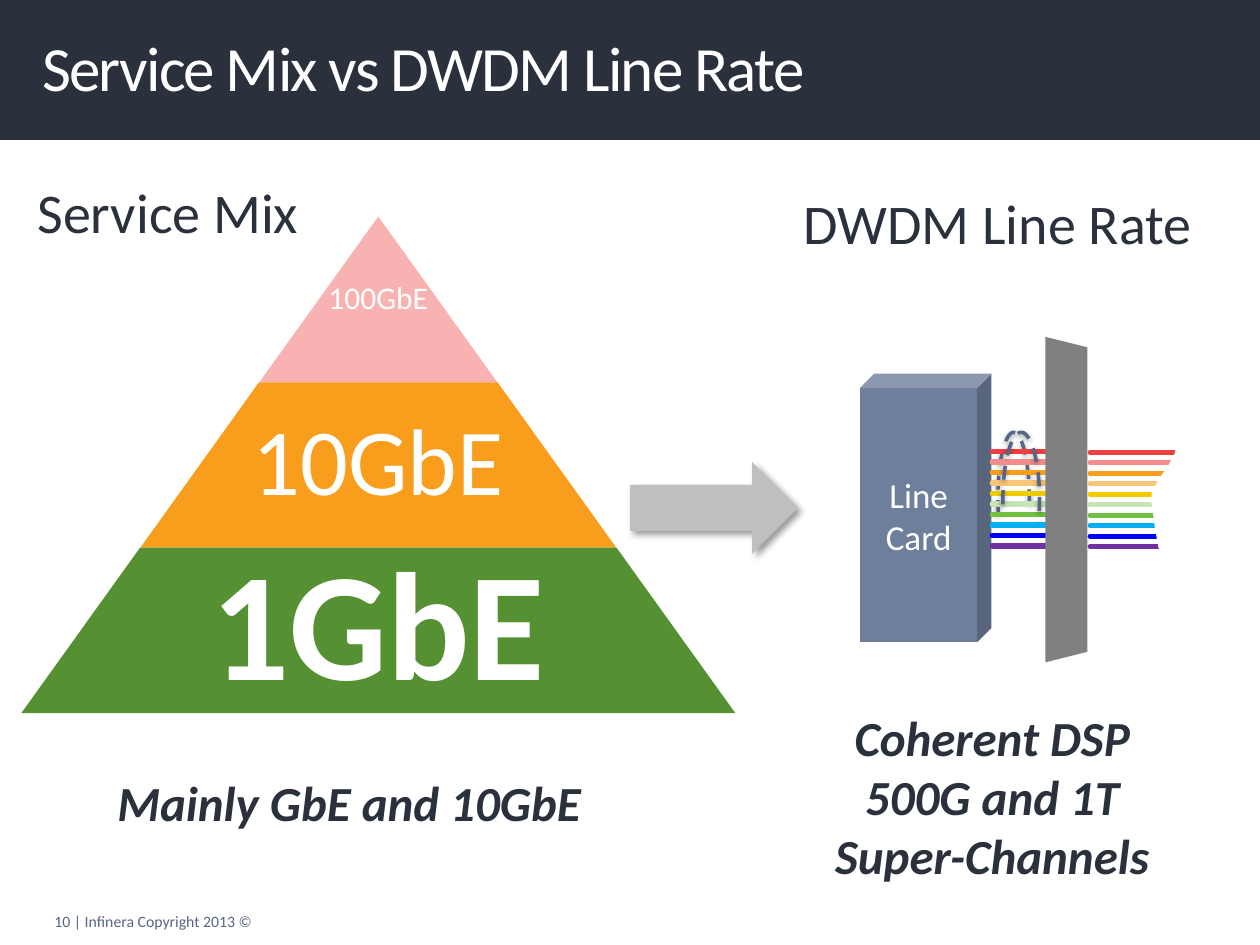
"""Build the slide comparing the Ethernet service mix with the DWDM line rate."""
from typing import NamedTuple, Optional

from lxml.etree import SubElement
from pptx import Presentation
from pptx.dml.color import RGBColor
from pptx.enum.dml import MSO_LINE
from pptx.enum.shapes import MSO_CONNECTOR, MSO_SHAPE as Preset
from pptx.enum.text import MSO_ANCHOR as Anchor, MSO_AUTO_SIZE, PP_ALIGN as Align
from pptx.oxml.ns import qn
from pptx.util import Pt

COLOURS = {
    "navy": "2A313D", "white": "FFFFFF", "slate": "556686", "card": "6E7F9B",
    "pink": "F9B2B2", "orange": "F89E1C", "green": "559132",
    "filter": "808080", "arrow": "BFBFBF", "black": "000000",
}
CHANNELS = ["EF3F3F", "F58C8C", "F89E1C", "FBC577", "F0CC01",
            "C7E5B4", "72BF44", "00B0F0", "0000FF", "7030A0"]
FONT = "Calibri"
CHANNEL_GAP = 6
TIER_HEIGHT, TIER_STEP = 94.5, 136
PYRAMID_CENTRE, PYRAMID_TOP = 216.2, 124
FADED_EDGE = [(678, 222), (677, 237), (671, 260), (667, 267), (662, 274),
              (658, 282), (658, 287), (659.5, 302), (662, 313), (668, 323),
              (671, 334), (680, 338), (688, 348), (693, 337), (696, 300),
              (694, 273), (690, 255), (683, 236), (680, 220)]


class Box(NamedTuple):
    left: float
    top: float
    width: float
    height: float


class Style(NamedTuple):
    size: float
    colour: str = "navy"
    bold: bool = False
    italic: bool = False
    align: Align = Align.CENTER
    spacing: Optional[float] = None


class Shadow(NamedTuple):
    alpha: int
    blur: float
    distance: float
    angle: int


class Tier(NamedTuple):
    label: str
    colour: str
    size: float
    bold: bool


class Loop(NamedTuple):
    box: Box
    end_angle: float
    mirrored: bool


TIERS = [Tier("100GbE", "pink", 18, False),
         Tier("10GbE", "orange", 54, False),
         Tier("1GbE", "green", 88, True)]
BACK_LOOP = Loop(Box(570.2, 247, 18, 75.6), 57.41, True)
FRONT_LOOP = Loop(Box(573.1, 247, 20.9, 75.6), 53.61, False)
LOOP_SHADOW = Shadow(38, 3.1, 1.6, 90)
ARROW_SHADOW = Shadow(40, 4, 3, 45)


def rgb(name: str) -> RGBColor:
    """Return a named colour, or a hex string, as an RGB colour."""
    return RGBColor.from_string(COLOURS.get(name, name))


def write(frame, lines: list[str], style: Style) -> None:
    """Fill a text frame with equally styled paragraphs."""
    frame.text = "\n".join(lines)
    for paragraph in frame.paragraphs:
        paragraph.alignment = style.align
        if style.spacing:
            paragraph.line_spacing = style.spacing
        font = paragraph.font
        font.name, font.size = FONT, Pt(style.size)
        font.bold, font.italic = style.bold, style.italic
        font.color.rgb = rgb(style.colour)


def add_label(slide, box: Box, lines: list[str], style: Style,
              wrap: bool = True, anchor: Anchor = Anchor.TOP) -> None:
    """Add a text box."""
    frame = slide.shapes.add_textbox(*map(Pt, box)).text_frame
    frame.word_wrap = wrap
    frame.vertical_anchor = anchor
    write(frame, lines, style)


def add_filled(slide, preset: Preset, box: Box, colour: str,
               adjustment: Optional[float] = None):
    """Add a flat preset shape without an outline."""
    shape = slide.shapes.add_shape(preset, *map(Pt, box))
    shape.shadow.inherit = False
    shape.fill.solid()
    shape.fill.fore_color.rgb = rgb(colour)
    shape.line.fill.background()
    if adjustment is not None:
        shape.adjustments[0] = adjustment
    return shape


def cast_shadow(shape, shadow: Shadow) -> None:
    """Give a shape an outer shadow."""
    shape.shadow.inherit = False
    effects = shape._element.spPr.find(qn("a:effectLst"))
    outer = SubElement(effects, qn("a:outerShdw"), blurRad=str(Pt(shadow.blur)),
                       dist=str(Pt(shadow.distance)), dir=str(shadow.angle * 60000),
                       rotWithShape="0")
    tint = SubElement(outer, qn("a:srgbClr"), val=COLOURS["black"])
    SubElement(tint, qn("a:alpha"), val=str(shadow.alpha * 1000))


def add_loop(slide, loop: Loop) -> None:
    """Add a dashed arc around the channels."""
    arc = slide.shapes.add_shape(Preset.ARC, *map(Pt, loop.box))
    arc.adjustments[0] = 162 * 0.6
    arc.adjustments[1] = loop.end_angle * 0.6
    arc.fill.background()
    arc.line.color.rgb = rgb("slate")
    arc.line.width = Pt(2)
    arc.line.dash_style = MSO_LINE.DASH
    if loop.mirrored:
        arc._element.spPr.find(qn("a:xfrm")).set("flipH", "1")
    cast_shadow(arc, LOOP_SHADOW)


def add_channels(slide, left: float, right: float, top: float) -> None:
    """Add the evenly spaced, round-capped wavelength lines."""
    for index, colour in enumerate(CHANNELS):
        y = Pt(top + index * CHANNEL_GAP)
        channel = slide.shapes.add_connector(
            MSO_CONNECTOR.STRAIGHT, Pt(left), y, Pt(right), y)
        channel.line.color.rgb = rgb(colour)
        channel.line.width = Pt(3)
        channel.line._ln.set("cap", "rnd")
        SubElement(channel._element.spPr, qn("a:effectLst"))


def add_header(slide) -> None:
    """Add the title on its dark band."""
    band = add_filled(slide, Preset.RECTANGLE, Box(0, 0, 720, 80), "navy")
    slide.shapes._spTree.insert(2, band._element)
    title = slide.shapes.title
    title.left, title.top, title.width, title.height = map(Pt, Box(24, 5, 672, 73.5))
    frame = title.text_frame
    frame.auto_size = MSO_AUTO_SIZE.NONE
    frame.vertical_anchor = Anchor.MIDDLE
    frame.margin_left = 0
    write(frame, ["Service Mix vs DWDM Line Rate"],
          Style(36, "white", align=Align.LEFT, spacing=Pt(36)))
    frame.paragraphs[0].runs[0].font._element.set("spc", "-100")


def add_pyramid(slide) -> None:
    """Add the three service tiers, widening downwards."""
    for level, tier in enumerate(TIERS):
        width = TIER_STEP * (level + 1)
        box = Box(PYRAMID_CENTRE - width / 2, PYRAMID_TOP + level * TIER_HEIGHT,
                  width, TIER_HEIGHT)
        add_filled(slide, Preset.TRAPEZOID, box, tier.colour, 0.718)
        add_label(slide, box, [tier.label],
                  Style(tier.size, "white", tier.bold, spacing=0.9),
                  wrap=False, anchor=Anchor.MIDDLE)


def add_line_side(slide) -> None:
    """Add the line card, its channels and the filter they pass through."""
    add_loop(slide, BACK_LOOP)
    card = add_filled(slide, Preset.CUBE, Box(491.5, 213.6, 75, 153.4), "card", 0.107)
    card.text_frame.vertical_anchor = Anchor.MIDDLE
    write(card.text_frame, ["Line", "Card"], Style(20, "white"))
    add_channels(slide, 567, 603, 258)
    mux = add_filled(slide, Preset.TRAPEZOID, Box(516.3, 273.5, 186, 24), "filter", 0.25)
    mux.rotation = 90
    add_channels(slide, 623, 685, 258.4)
    builder = slide.shapes.build_freeform(*FADED_EDGE[0], scale=Pt(1))
    builder.add_line_segments(FADED_EDGE[1:], close=True)
    edge = builder.convert_to_shape()
    edge.shadow.inherit = False
    edge.fill.solid()
    edge.fill.fore_color.rgb = rgb("white")
    edge.line.fill.background()
    add_loop(slide, FRONT_LOOP)


def main() -> None:
    """Build and save the slide."""
    deck = Presentation()
    deck.slide_width, deck.slide_height = Pt(720), Pt(540)
    slide = deck.slides.add_slide(deck.slide_layouts[5])
    heading = Style(32)
    summary = Style(28, bold=True, italic=True)
    add_header(slide)
    add_label(slide, Box(3.5, 517.5, 168, 18), ["10 | Infinera Copyright 2013 ©"],
              Style(9, "slate"))
    add_pyramid(slide)
    add_line_side(slide)
    add_label(slide, Box(0, 98, 192, 46), ["Service Mix"], heading)
    add_label(slide, Box(438, 104, 264, 46), ["DWDM Line Rate"], heading)
    arrow = add_filled(slide, Preset.RIGHT_ARROW, Box(360, 264, 96, 52.5), "arrow")
    cast_shadow(arrow, ARROW_SHADOW)
    add_label(slide, Box(60, 438, 282, 41), ["Mainly GbE and 10GbE"],
              summary._replace(align=Align.LEFT), wrap=False)
    add_label(slide, Box(462, 401, 210, 109),
              ["Coherent DSP", "500G and 1T Super-Channels"], summary)
    deck.save("out.pptx")


if __name__ == "__main__":
    main()
